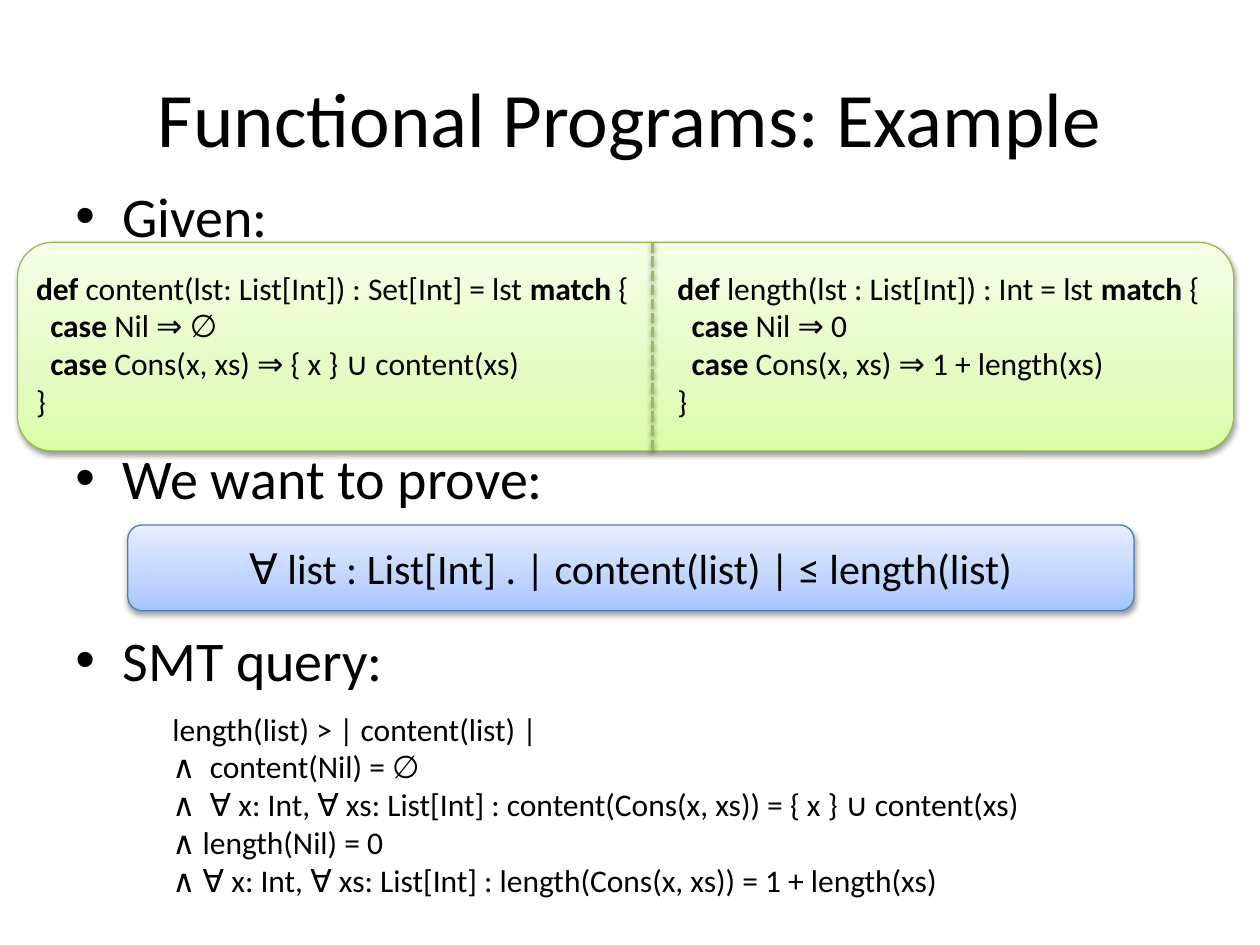
from copy import deepcopy

from lxml import etree
from pptx import Presentation
from pptx.dml.color import RGBColor
from pptx.enum import dml, shapes, text
from pptx.oxml.ns import qn
from pptx.util import Pt

FONT = "Calibri"
COLORS = {
    "text": "000000",
    "green_line": "98B955",
    "divider": "9BBB59",
    "blue_line": "4B7EBC",
}
GREENS = ["DAFDA7", "E4FCC2", "F5FFE7"]
BLUES = ["A4C4FF", "BFD4FF", "E6EEFF"]
STOPS = [0, 0.35, 1]

TITLE = "Functional Programs: Example"
BULLETS = [("Given:", 100), ("We want to prove:", 250), ("SMT query:", 354)]
CONTENT_CODE = [
    "*def* content(lst: List[Int]) : Set[Int] = lst *match* {",
    "  *case* Nil ⇒ ∅",
    "  *case* Cons(x, xs) ⇒ { x } ∪ content(xs)",
    "}",
]
LENGTH_CODE = [
    "*def* length(lst : List[Int]) : Int = lst *match* {",
    "  *case* Nil ⇒ 0",
    "  *case* Cons(x, xs) ⇒ 1 + length(xs)",
    "}",
]
QUERY = [
    "length(list) > | content(list) |",
    "∧  content(Nil) = ∅",
    "∧  ∀ x: Int, ∀ xs: List[Int] : content(Cons(x, xs)) = { x } ∪ content(xs)",
    "∧ length(Nil) = 0",
    "∧ ∀ x: Int, ∀ xs: List[Int] : length(Cons(x, xs)) = 1 + length(xs)",
]
CLAIM = "∀ list : List[Int] . | content(list) | ≤ length(list)"

PANEL = (10, 138.5, 695, 119.25)
CLAIM_BOX = (73, 300, 575, 49)
DIVIDER_X = 373
TEXTS = [
    (LENGTH_CODE, (380, 150, 317, 94), True),
    (QUERY, (91.5, 402, 537, 117), True),
    (CONTENT_CODE, (13.5, 150, 356.5, 94), False),
]


def points(box):
    return [Pt(v) for v in box]


def color(name):
    return RGBColor.from_string(COLORS[name])


def write(tf, lines, size, align=text.PP_ALIGN.LEFT):
    for i, line in enumerate(lines):
        p = tf.add_paragraph() if i else tf.paragraphs[0]
        p.alignment = align
        for j, part in enumerate(line.split("*")):
            if part:
                r = p.add_run()
                r.text = part
                r.font.name = FONT
                r.font.size = Pt(size)
                r.font.bold = j % 2 == 1
                r.font.color.rgb = color("text")


def add_text(s, lines, box, size, wrap=True):
    tf = s.shapes.add_textbox(*points(box)).text_frame
    tf.word_wrap = wrap
    write(tf, lines, size)
    return tf


def add_bullet(s, line, top):
    tf = add_text(s, [line], (36, top, 648, 49), 32)
    pPr = tf.paragraphs[0]._p.get_or_add_pPr()
    pPr.set("marL", str(Pt(27)))
    pPr.set("indent", str(-Pt(27)))
    etree.SubElement(pPr, qn("a:buFont"), typeface="Arial")
    etree.SubElement(pPr, qn("a:buChar"), char="•")


def add_shadow(sp):
    effects = etree.SubElement(sp._element.spPr, qn("a:effectLst"))
    shadow = etree.SubElement(
        effects, qn("a:outerShdw"), blurRad=str(Pt(3.1)), dist=str(Pt(1.6)),
        dir="5400000", rotWithShape="0")
    clr = etree.SubElement(shadow, qn("a:srgbClr"), val="000000")
    etree.SubElement(clr, qn("a:alpha"), val="38000")


def add_panel(s, box, gradient, line):
    sp = s.shapes.add_shape(shapes.MSO_SHAPE.ROUNDED_RECTANGLE, *points(box))
    sp.fill.gradient()
    sp.fill.gradient_angle = 90
    stop_list = next(sp._element.spPr.iter(qn("a:gsLst")))
    stop_list.append(deepcopy(stop_list[-1]))
    for stop, position, value in zip(sp.fill.gradient_stops, STOPS, gradient):
        stop.position = position
        stop.color.rgb = RGBColor.from_string(value)
    sp.line.color.rgb = color(line)
    sp.line.width = Pt(0.75)
    add_shadow(sp)
    return sp


def add_divider(s):
    top, height = PANEL[1], PANEL[3]
    line = s.shapes.add_connector(
        shapes.MSO_CONNECTOR.STRAIGHT,
        *points((DIVIDER_X, top, DIVIDER_X, top + height)))
    line.line.color.rgb = color("divider")
    line.line.width = Pt(2)
    line.line.dash_style = dml.MSO_LINE.SQUARE_DOT
    add_shadow(line)


def main():
    prs = Presentation()
    prs.slide_width, prs.slide_height = Pt(720), Pt(540)
    s = prs.slides.add_slide(prs.slide_layouts[5])

    title = s.shapes.title
    title.left, title.top, title.width, title.height = points((36, 21.6, 648, 90))
    title.text_frame.vertical_anchor = text.MSO_ANCHOR.MIDDLE
    write(title.text_frame, [TITLE], 44, text.PP_ALIGN.CENTER)

    add_panel(s, PANEL, GREENS, "green_line")
    for lines, box, wrap in TEXTS:
        add_text(s, lines, box, 18, wrap)
    for line, top in BULLETS:
        add_bullet(s, line, top)

    claim = add_panel(s, CLAIM_BOX, BLUES, "blue_line")
    claim.text_frame.vertical_anchor = text.MSO_ANCHOR.MIDDLE
    write(claim.text_frame, [CLAIM], 24, text.PP_ALIGN.CENTER)
    add_divider(s)

    prs.save("out.pptx")


if __name__ == "__main__":
    main()
